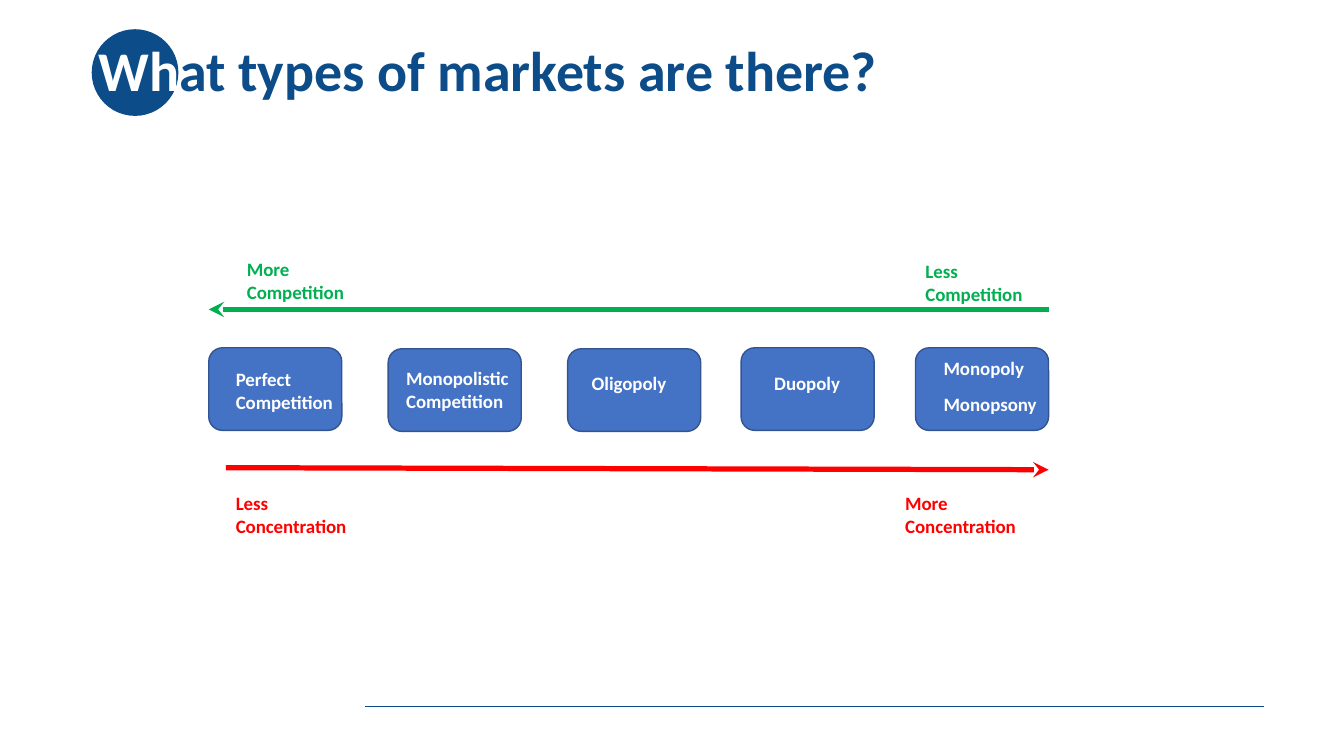
from lxml.etree import SubElement
from pptx import Presentation
from pptx.dml.color import RGBColor
from pptx.enum.shapes import MSO_CONNECTOR, MSO_SHAPE
from pptx.enum.text import MSO_ANCHOR
from pptx.oxml.ns import qn
from pptx.util import Pt

EMU_PER_PX = 9144  # 100 px to the inch
WHITE = RGBColor(0xFF, 0xFF, 0xFF)
NAVY = RGBColor(0x0C, 0x4C, 0x88)
BLUE = RGBColor(0x44, 0x72, 0xC4)
BLUE_EDGE = RGBColor(0x32, 0x54, 0x91)
GREEN = RGBColor(0x00, 0xB0, 0x50)
RED = RGBColor(0xFF, 0x00, 0x00)

BOX_WIDTH, BOX_HEIGHT = 132, 82
# Left and top of each market box
MARKET_BOXES = [(207, 345), (385, 346), (563, 346), (735, 345), (908, 345)]
# Text, left, top, width, height, colour
LABELS = [
    ("Perfect Competition", 224, 360, 143, 56, WHITE),
    ("Monopolistic Competition", 393, 359, 132, 56, WHITE),
    ("Oligopoly", 577, 364, 132, 33, WHITE),
    ("Duopoly", 758, 364, 132, 33, WHITE),
    ("Monopoly", 926, 349, 132, 33, WHITE),
    ("Monopsony", 926, 385, 132, 33, WHITE),
    ("More Competition", 235, 251, 125, 56, GREEN),
    ("Less Competition", 908, 253, 125, 56, GREEN),
    ("Less Concentration", 224, 483, 143, 56, RED),
    ("More Concentration", 888, 483, 143, 56, RED),
]


def px(*lengths):
    return [length * EMU_PER_PX for length in lengths]


class MarketSlide:
    font_name = "Calibri"
    label_size = Pt(13.5)
    title_size = Pt(40)

    def __init__(self, deck):
        self.page = deck.slides.add_slide(deck.slide_layouts[6])

    def shape(self, preset, left, top, width, height, fill, edge=None):
        shape = self.page.shapes.add_shape(preset, *px(left, top, width, height))
        shape.shadow.inherit = False
        shape.fill.solid()
        shape.fill.fore_color.rgb = fill
        if edge is None:
            shape.line.fill.background()
        else:
            shape.line.color.rgb = edge
            shape.line.width = Pt(1)

    def line(self, start, end, color, weight, arrow=False):
        line = self.page.shapes.add_connector(
            MSO_CONNECTOR.STRAIGHT, *px(*start, *end))
        line.line.color.rgb = color
        line.line.width = Pt(weight)
        if arrow:
            SubElement(line.line._get_or_add_ln(), qn("a:tailEnd"), type="stealth")
        SubElement(line._element.spPr, qn("a:effectLst"))

    def text(self, spans, left, top, width, height, size, anchor=MSO_ANCHOR.TOP):
        """Write one bold paragraph made of (text, colour) spans."""
        box = self.page.shapes.add_textbox(*px(left, top, width, height))
        frame = box.text_frame
        frame.word_wrap = True
        frame.vertical_anchor = anchor
        para = frame.paragraphs[0]
        para.font.name = self.font_name
        para.font.size = size
        para.font.bold = True
        for content, color in spans:
            span = para.add_run()
            span.text = content
            span.font.color.rgb = color
        return para

    def title(self, spans, left, top, width, height):
        para = self.text(spans, left, top, width, height,
                         self.title_size, MSO_ANCHOR.MIDDLE)
        para.line_spacing = 0.9

    def label(self, content, left, top, width, height, color):
        self.text([(content, color)], left, top, width, height, self.label_size)


def main():
    deck = Presentation()
    deck.slide_width, deck.slide_height = px(1333, 750)
    slide = MarketSlide(deck)

    slide.line((362, 701), (1254, 701), NAVY, 0.5)
    slide.shape(MSO_SHAPE.OVAL, 91, 29, 86, 86, NAVY)
    slide.title([("Wh", WHITE), ("at types of markets are there?", NAVY)],
                88, 0, 1150, 145)

    for left, top in MARKET_BOXES:
        slide.shape(MSO_SHAPE.ROUNDED_RECTANGLE, left, top,
                    BOX_WIDTH, BOX_HEIGHT, BLUE, BLUE_EDGE)
    slide.line((1040, 307), (207, 307), GREEN, 3.75, arrow=True)
    slide.line((224, 464), (1040, 466), RED, 3.75, arrow=True)
    for label in LABELS:
        slide.label(*label)

    deck.save("out.pptx")


if __name__ == "__main__":
    main()
